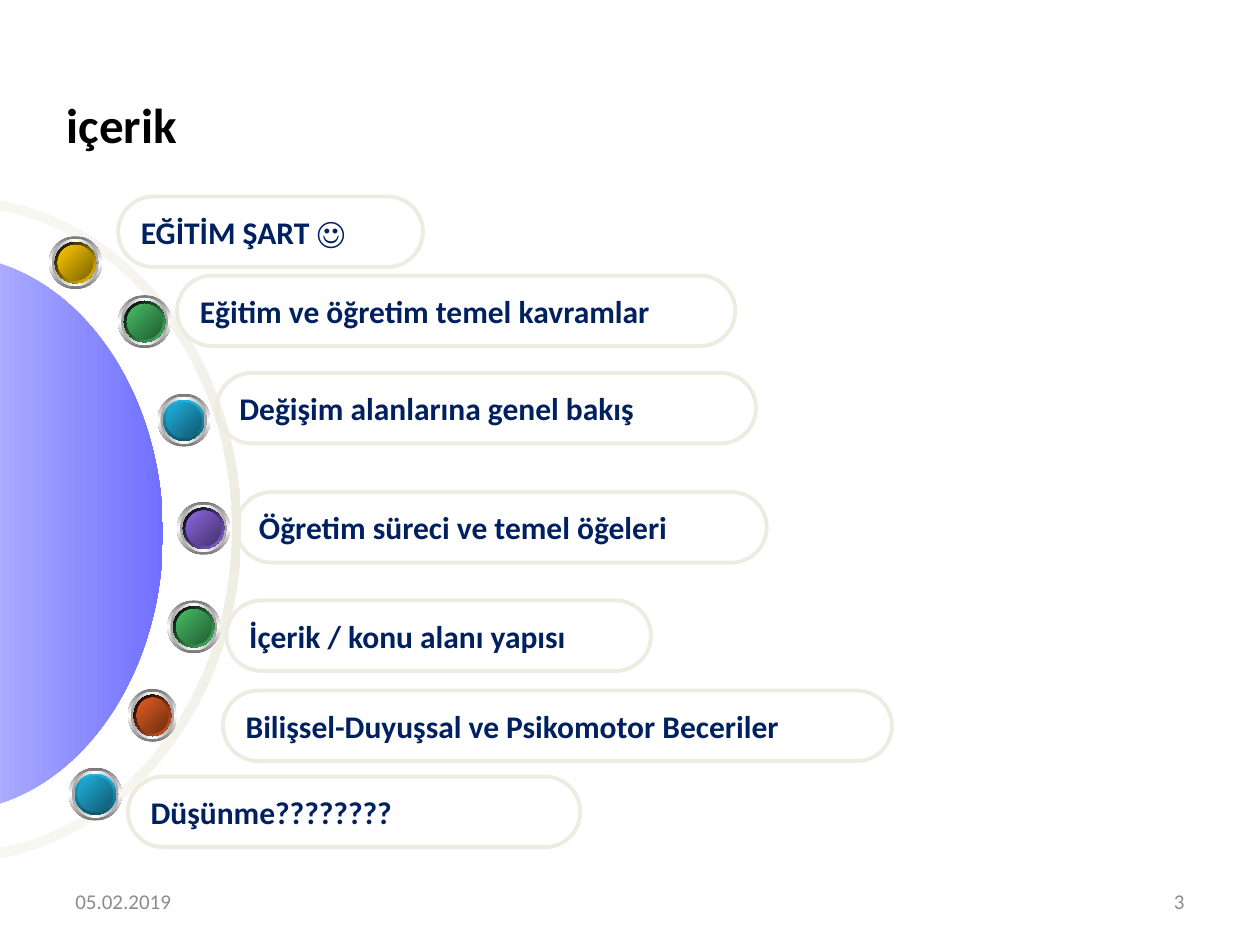
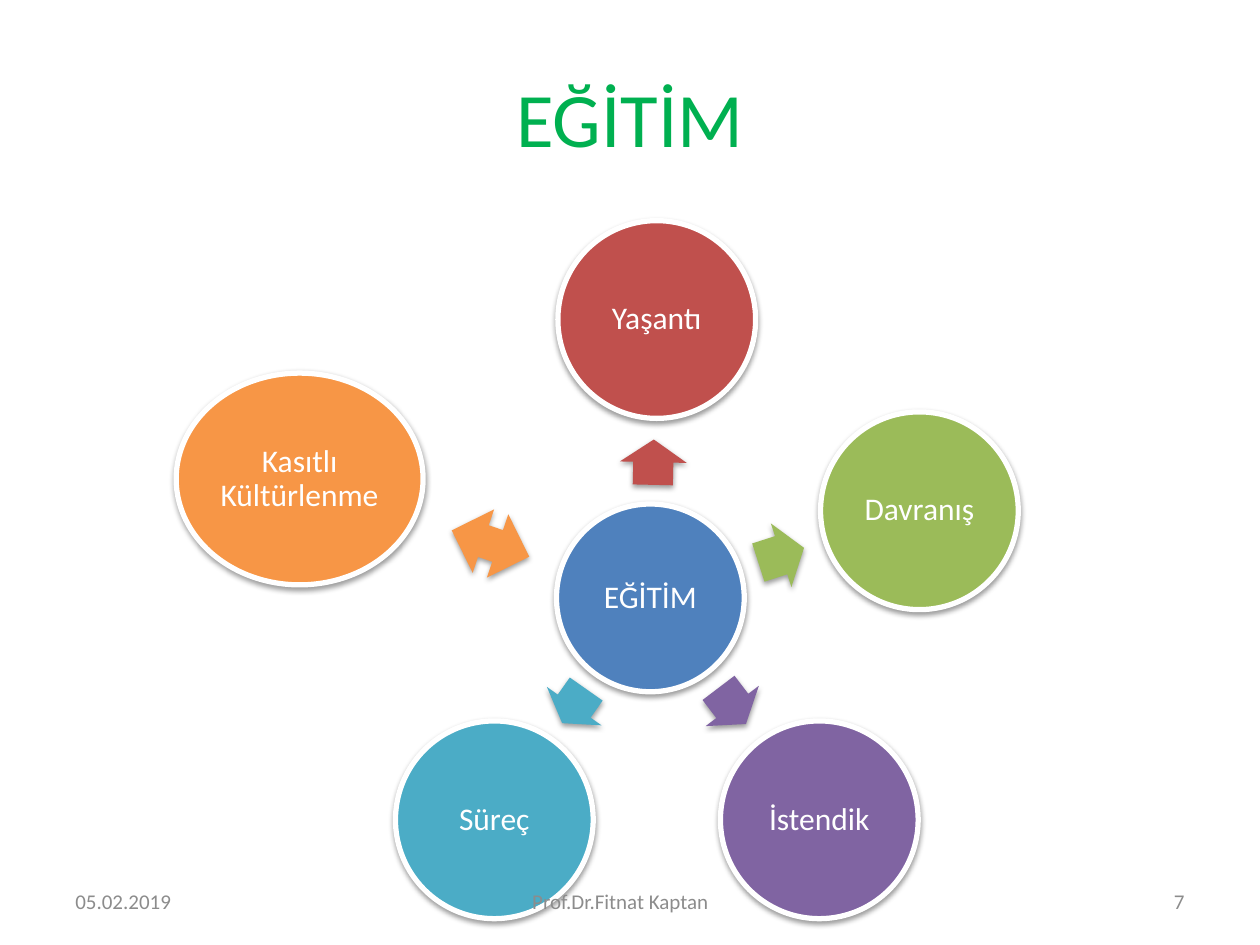
from typing import NamedTuple

from lxml import etree
from pptx import Presentation
from pptx.dml.color import RGBColor
from pptx.enum.shapes import MSO_SHAPE
from pptx.enum.text import MSO_ANCHOR, PP_ALIGN
from pptx.oxml.ns import qn
from pptx.shapes.autoshape import Shape
from pptx.slide import Slide
from pptx.util import Pt

OVAL = MSO_SHAPE.OVAL
PILL = MSO_SHAPE.ROUNDED_RECTANGLE
ARROW = MSO_SHAPE.RIGHT_ARROW
DOUBLE = MSO_SHAPE.LEFT_RIGHT_ARROW
MIDDLE = MSO_ANCHOR.MIDDLE
LEFT, CENTER, RIGHT = PP_ALIGN.LEFT, PP_ALIGN.CENTER, PP_ALIGN.RIGHT

FONT = "Calibri"
BLACK = RGBColor(0x00, 0x00, 0x00)
WHITE = RGBColor(0xFF, 0xFF, 0xFF)
NAVY = RGBColor(0x00, 0x20, 0x60)
GREY = RGBColor(0x8C, 0x8C, 0x8C)
LEAF = RGBColor(0x00, 0xB0, 0x50)
SAND = RGBColor(0xEE, 0xEC, 0xE1)
CREAM = RGBColor(0xF7, 0xF7, 0xF2)
PALE = RGBColor(0xBD, 0xBD, 0xFF)
IRIS = RGBColor(0x70, 0x70, 0xFF)
STEEL = RGBColor(0x76, 0x76, 0x76)
SILVER = RGBColor(0xA2, 0xA2, 0xA2)
GOLD, BRONZE = RGBColor(0xFF, 0xCC, 0x00), RGBColor(0x7C, 0x63, 0x00)
GREEN, FOREST = RGBColor(0x48, 0xBE, 0x67), RGBColor(0x23, 0x5C, 0x32)
CYAN, TEAL = RGBColor(0x21, 0xB3, 0xE1), RGBColor(0x10, 0x57, 0x6D)
LILAC, PLUM = RGBColor(0x8D, 0x67, 0xE1), RGBColor(0x45, 0x32, 0x6D)
FLAME, RUST = RGBColor(0xE3, 0x5E, 0x23), RGBColor(0x6E, 0x2E, 0x11)
BLUE = RGBColor(0x4F, 0x81, 0xBD)
RED = RGBColor(0xC0, 0x50, 0x4D)
LIME = RGBColor(0x9B, 0xBB, 0x59)
PURPLE = RGBColor(0x80, 0x64, 0xA2)
AQUA = RGBColor(0x4B, 0xAC, 0xC6)
ORANGE = RGBColor(0xF7, 0x96, 0x46)

PILL_HEIGHT = 40.3
ORB_SIZE = 30.2
FOOT_TOP, FOOT_HEIGHT = 500.4, 28.8
BEND = 0.55  # handle length of a quarter arc, as a part of its radius


class Box(NamedTuple):
    left: float
    top: float
    width: float
    height: float

    def points(self) -> list[Pt]:
        return [Pt(side) for side in self]

    def inset(self, gap: float) -> "Box":
        return Box(self.left + gap, self.top + gap,
                   self.width - 2 * gap, self.height - 2 * gap)


class Item(NamedTuple):
    text: str
    left: float
    top: float
    width: float


class Orb(NamedTuple):
    left: float
    top: float
    light: RGBColor
    dark: RGBColor
    width: float = ORB_SIZE


class Node(NamedTuple):
    text: str
    box: Box
    color: RGBColor


class Link(NamedTuple):
    kind: MSO_SHAPE
    box: Box
    turn: float
    color: RGBColor
    adjust: tuple[float, float]


ITEMS = [
    Item("EĞİTİM ŞART ☺", 67.5, 112.3, 174.2),
    Item("Eğitim ve öğretim temel kavramlar", 101.2, 157.5, 319),
    Item("Değişim alanlarına genel bakış", 123.8, 213.1, 308.2),
    Item("Öğretim süreci ve temel öğeleri", 135, 281.2, 303.1),
    Item("İçerik / konu alanı yapısı", 129.4, 343.1, 242.6),
    Item("Bilişsel-Duyuşsal ve Psikomotor Beceriler", 127.4, 394.6, 382.3),
    Item("Düşünme????????", 73.1, 443.8, 258.5),
]
ORBS = [
    Orb(28, 135, GOLD, BRONZE),
    Orb(67.5, 168.7, GREEN, FOREST),
    Orb(90, 225, CYAN, TEAL),
    Orb(101.2, 286.8, LILAC, PLUM),
    Orb(95.6, 343.1, GREEN, FOREST),
    Orb(73.1, 393.7, FLAME, RUST, 28.1),
    Orb(39.4, 438.7, CYAN, TEAL),
]
NODES = [
    Node("EĞİTİM", Box(318, 288, 107.3, 107.3), BLUE),
    Node("Yaşantı", Box(318.8, 126.1, 113, 113), RED),
    Node("Davranış", Box(468.9, 235.4, 113, 113), LIME),
    Node("İstendik", Box(411.7, 412, 113, 113), PURPLE),
    Node("Süreç", Box(226, 412, 113, 113), AQUA),
    Node("Kasıtlı Kültürlenme", Box(100.7, 213.2, 141.1, 121), ORANGE),
]
LINKS = [
    Link(ARROW, Box(360.4, 245, 25.9, 38.2), 271.3, RED, (0.6, 0.5)),
    Link(ARROW, Box(432.7, 298.2, 27.4, 38.2), 342.1, LIME, (0.6, 0.5)),
    Link(ARROW, Box(405.5, 384.3, 25.9, 38.2), 52.8, PURPLE, (0.6, 0.5)),
    Link(ARROW, Box(316.2, 384.4, 23.8, 38.2), 125.1, AQUA, (0.6, 0.5)),
    Link(DOUBLE, Box(256.9, 291.5, 46.8, 38.2), 198.7, ORANGE, (0.5, 0.5)),
]


def style(shape: Shape, text: str, size: float, color: RGBColor,
          align: PP_ALIGN, bold: bool = False) -> None:
    """Set the text of a shape and format its paragraph."""
    frame = shape.text_frame
    frame.text = text
    frame.vertical_anchor = MIDDLE
    frame.word_wrap = True
    para = frame.paragraphs[0]
    para.alignment = align
    font = para.runs[0].font
    font.name, font.size, font.bold = FONT, Pt(size), bold
    font.color.rgb = color


def shade(shape: Shape, colors: list[RGBColor], angle: int) -> None:
    """Fill a shape with an even linear gradient and drop its outline."""
    shape.shadow.inherit = False
    shape.line.fill.background()
    shape.fill.solid()
    solid = shape.element.spPr.find(qn("a:solidFill"))
    grad = etree.Element(qn("a:gradFill"), rotWithShape="1")
    stops = etree.SubElement(grad, qn("a:gsLst"))
    for i, color in enumerate(colors):
        place = 100000 * i // (len(colors) - 1)
        stop = etree.SubElement(stops, qn("a:gs"), pos=str(place))
        etree.SubElement(stop, qn("a:srgbClr"), val=str(color))
    etree.SubElement(grad, qn("a:lin"), ang=str(angle * 60000), scaled="0")
    solid.getparent().replace(solid, grad)


def cast(shape: Shape) -> None:
    """Give a shape a soft shadow below it."""
    shape.shadow.inherit = False
    effects = shape.element.spPr.find(qn("a:effectLst"))
    outer = etree.SubElement(effects, qn("a:outerShdw"), blurRad=str(Pt(3.1)),
                             dist=str(Pt(1.6)), dir="5400000", rotWithShape="0")
    black = etree.SubElement(outer, qn("a:srgbClr"), val=str(BLACK))
    etree.SubElement(black, qn("a:alpha"), val="38000")


def arc(x: float, y: float, wide: float, high: float) -> list[tuple[Pt, Pt]]:
    """Nodes and handles of an ellipse's right half, from top to bottom."""
    units = [(0, -1), (BEND, -1), (1, -BEND), (1, 0),
             (1, BEND), (BEND, 1), (0, 1)]
    return [(Pt(x + wide * u), Pt(y + high * v)) for u, v in units]


def outline(slide: Slide, points: list[tuple[Pt, Pt]], steps: str) -> Shape:
    """Draw a closed outline; each step is C for a curve or L for a line."""
    build = slide.shapes.build_freeform(*points[0])
    build.add_line_segments(points[1:], close=True)
    shape = build.convert_to_shape()
    lines = iter(list(shape.element.iter(qn("a:lnTo"))))
    for step in steps:
        first = next(lines)
        if step == "C":
            first.addprevious(curve := etree.Element(qn("a:cubicBezTo")))
            for line in (first, next(lines), next(lines)):
                curve.append(line[0])
                line.getparent().remove(line)
    return shape


def draw_pill(slide: Slide, item: Item) -> None:
    box = Box(item.left, item.top, item.width, PILL_HEIGHT)
    pill = slide.shapes.add_shape(PILL, *box.points())
    pill.adjustments[0] = 0.5
    pill.shadow.inherit = False
    pill.fill.background()
    pill.line.color.rgb = SAND
    pill.line.width = Pt(2.25)
    style(pill, item.text, 18, NAVY, LEFT, bold=True)
    pill.text_frame.word_wrap = False


def draw_orb(slide: Slide, orb: Orb) -> None:
    box = Box(orb.left, orb.top, orb.width, ORB_SIZE)
    rim = ([orb.light, orb.dark], 90) if orb.light == CYAN else ([BLACK, orb.light], 45)
    layers = [
        (0, [STEEL, WHITE, STEEL], 90),
        (1.7, [SILVER, WHITE, SILVER], 0),
        (3.3, *rim),
        (5, [orb.light, orb.dark], 45),
    ]
    group = slide.shapes.add_group_shape()
    for gap, colors, angle in layers:
        disc = group.shapes.add_shape(OVAL, *box.inset(gap).points())
        shade(disc, colors, angle)


def draw_node(slide: Slide, node: Node) -> None:
    disc = slide.shapes.add_shape(OVAL, *node.box.points())
    disc.fill.solid()
    disc.fill.fore_color.rgb = node.color
    disc.line.color.rgb = WHITE
    disc.line.width = Pt(3)
    cast(disc)
    style(disc, node.text, 18, WHITE, CENTER)
    frame = disc.text_frame
    frame.margin_left = frame.margin_right = Pt(2)
    frame.margin_top = frame.margin_bottom = Pt(2)
    frame.paragraphs[0].line_spacing = 0.9


def draw_link(slide: Slide, link: Link) -> None:
    arrow = slide.shapes.add_shape(link.kind, *link.box.points())
    for i, value in enumerate(link.adjust):
        arrow.adjustments[i] = value
    arrow.rotation = link.turn
    arrow.fill.solid()
    arrow.fill.fore_color.rgb = link.color
    arrow.line.fill.background()
    cast(arrow)


def add_slide(deck: Presentation, title: str, box: Box, size: float,
              color: RGBColor, align: PP_ALIGN, bold: bool = False) -> Slide:
    slide = deck.slides.add_slide(deck.slide_layouts[5])
    head = slide.shapes.title
    head.left, head.top, head.width, head.height = box.points()
    style(head, title, size, color, align, bold)
    return slide


def add_foot(slide: Slide, number: str, author: str = "") -> None:
    parts = [
        ("05.02.2019", 36, 167.8, LEFT),
        (author, 240.5, 228, CENTER),
        (number, 516.2, 167.8, RIGHT),
    ]
    for text, left, width, align in parts:
        if text:
            box = Box(left, FOOT_TOP, width, FOOT_HEIGHT)
            style(slide.shapes.add_textbox(*box.points()), text, 12, GREY, align)


def make_agenda(deck: Presentation) -> None:
    slide = add_slide(deck, "içerik", Box(31, 48.6, 660.2, 44.6), 28,
                      BLACK, LEFT, bold=True)
    inner = arc(-24.5, 302.4, 157.2, 184.3)
    outer = arc(-24.5, 302.4, 162.3, 190.1)
    ring = outline(slide, inner + outer[::-1], "CCLCC")
    shade(ring, [CREAM, SAND, CREAM], 90)
    dome = outline(slide, arc(-29.5, 304.9, 122.6, 158.8), "CC")
    shade(dome, [PALE, IRIS], 0)
    for item in ITEMS:
        draw_pill(slide, item)
    for orb in ORBS:
        draw_orb(slide, orb)
    add_foot(slide, "3")


def make_wheel(deck: Presentation) -> None:
    slide = add_slide(deck, "EĞİTİM", Box(36, 21.6, 648, 90), 44, LEAF, CENTER)
    for link in LINKS:
        draw_link(slide, link)
    for node in NODES:
        draw_node(slide, node)
    add_foot(slide, "7", "Prof.Dr.Fitnat Kaptan")


def main() -> None:
    deck = Presentation()
    deck.slide_width, deck.slide_height = Pt(720), Pt(540)
    make_agenda(deck)
    make_wheel(deck)
    deck.save("out.pptx")


if __name__ == "__main__":
    main()
